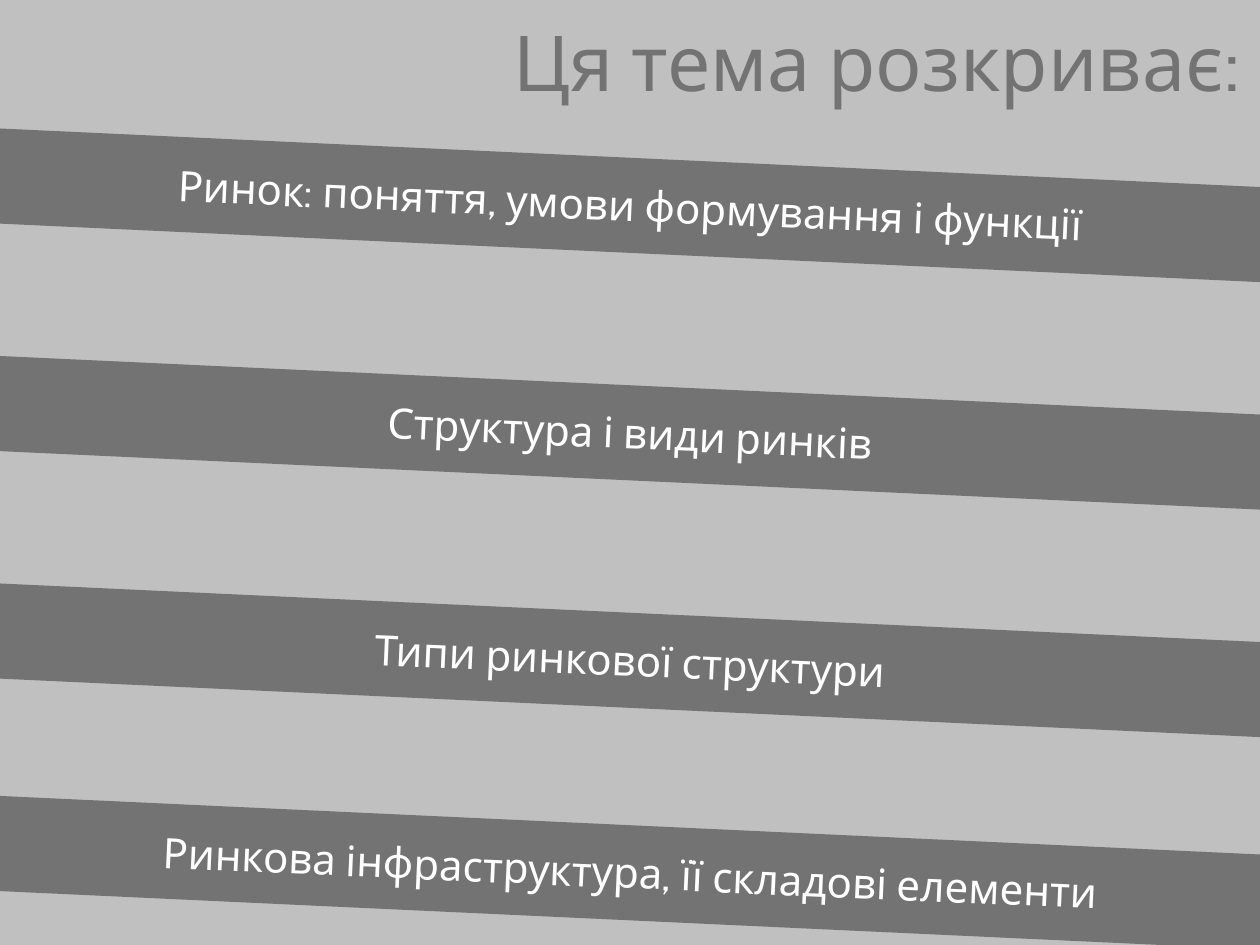
from dataclasses import dataclass

from pptx import Presentation
from pptx.dml.color import RGBColor
from pptx.enum import shapes, text
from pptx.util import Pt


@dataclass(frozen=True)
class Theme:
    font: str = "Cabin"
    light: str = "C0C0C0"
    dark: str = "737373"
    white: str = "FFFFFF"
    title: int = 44
    topic: int = 24


theme = Theme()
W, H = 720, 540

prs = Presentation()
prs.slide_width, prs.slide_height = Pt(W), Pt(H)
s = prs.slides.add_slide(prs.slide_layouts[6])


def add_filled(kind, x, y, w, h, color):
    sp = s.shapes.add_shape(kind, Pt(x), Pt(y), Pt(w), Pt(h))
    sp.shadow.inherit = False
    sp.fill.solid()
    sp.fill.fore_color.rgb = RGBColor.from_string(color)
    sp.line.fill.background()
    return sp


def add_text(content, *, x, y, w, h, size, color, rotation=0):
    sp = s.shapes.add_textbox(Pt(x), Pt(y), Pt(w), Pt(h))
    sp.rotation = rotation
    tf = sp.text_frame
    tf.word_wrap = True
    tf.vertical_anchor = text.MSO_ANCHOR.MIDDLE
    p = tf.paragraphs[0]
    p.alignment = text.PP_ALIGN.CENTER
    r = p.add_run()
    r.text = content
    r.font.name = theme.font
    r.font.size = Pt(size)
    r.font.color.rgb = RGBColor.from_string(color)


# Backdrop and title
add_filled(shapes.MSO_SHAPE.RECTANGLE, 0, 0, W, H, theme.light)
add_text("Ця тема розкриває:", x=282.2, y=-0.7, w=437.8, h=70.6,
         size=theme.title, color=theme.dark)

# Slanted bands, each centred on its own height
topics = [
    (117.3, "Ринок: поняття, умови формування і функції"),
    (247.3, "Структура і види ринків"),
    (377.3, "Типи ринкової структури"),
    (498.7, "Ринкова інфраструктура, її складові елементи"),
]
band_h, text_w, text_h = 87.8, 661, 56
for center, _ in topics:
    # Upright parallelogram turned on its side to span the slide
    band = add_filled(shapes.MSO_SHAPE.PARALLELOGRAM, (W - band_h) / 2,
                      center - W / 2, band_h, W, theme.dark)
    band.adjustments[0] = 0.381
    band.rotation = 270

# Topic captions follow the slope of the bands
for center, topic in topics:
    add_text(topic, x=(W - text_w) / 2, y=center - text_h / 2, w=text_w,
             h=text_h, size=theme.topic, color=theme.white, rotation=2.6)

prs.save("out.pptx")
